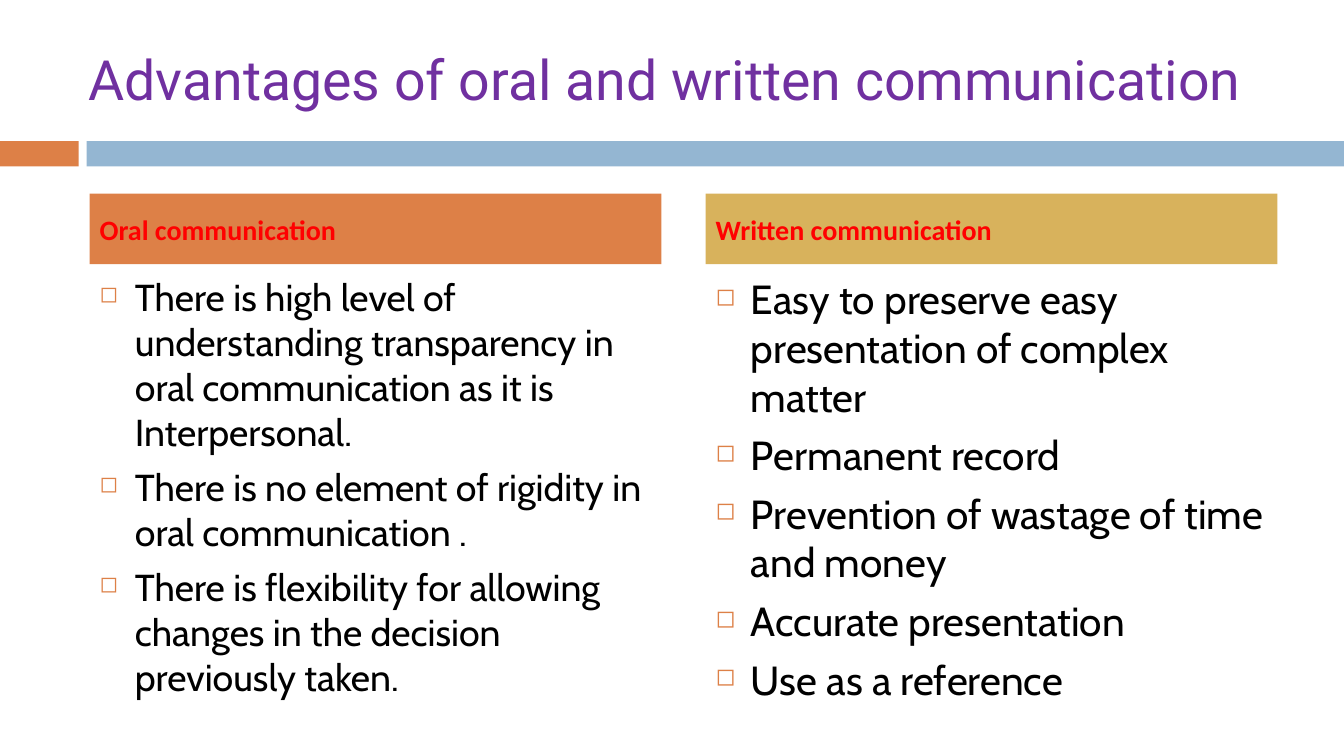
from lxml import etree
from pptx import Presentation
from pptx.dml.color import RGBColor
from pptx.enum import shapes, text
from pptx.oxml import ns
from pptx.util import Inches, Pt

COLORS = {
    "orange": "DD8047", "blue": "94B6D2", "gold": "D8B25C",
    "purple": "7030A0", "red": "FF0000", "black": "000000",
}
COLUMN_WIDTH = 5.67
COLUMNS = [
    (0.89, "Oral communication", "orange", 26.8, [
        "There is high level of understanding transparency in oral "
        "communication as it is Interpersonal.",
        "There is no element of rigidity in oral communication .",
        "There is flexibility for allowing changes in the decision previously taken.",
    ]),
    (7, "Written communication", "gold", 29, [
        "Easy to preserve easy presentation of complex matter",
        "Permanent record",
        "Prevention of wastage of time and money",
        "Accurate presentation",
        "Use as a reference",
    ]),
]


def rgb(name):
    return RGBColor.from_string(COLORS[name])


class SlideBuilder:
    FORMATS = {
        "title": {"name": "Roboto", "size": Pt(39.6), "bold": False},
        "heading": {"name": "Calibri", "size": Pt(20), "bold": True},
        "points": {"name": "Cabin", "bold": False},
    }
    TEXT_COLORS = {"title": "purple", "heading": "red", "points": "black"}

    def __init__(self, slide):
        self.slide = slide

    def bar(self, left, top, width, height, color):
        bar = self.slide.shapes.add_shape(
            shapes.MSO_SHAPE.RECTANGLE, *map(Inches, (left, top, width, height)))
        bar.shadow.inherit = False
        bar.fill.solid()
        bar.fill.fore_color.rgb = rgb(color)
        bar.line.fill.background()
        return bar

    def style(self, paragraph, role, **extra):
        for attribute, value in {**self.FORMATS[role], **extra}.items():
            setattr(paragraph.font, attribute, value)
        paragraph.font.color.rgb = rgb(self.TEXT_COLORS[role])
        paragraph.alignment = text.PP_ALIGN.LEFT

    def line(self, shape, wording, role):
        """Put one vertically centred line of text in a shape."""
        frame = shape.text_frame
        frame.word_wrap = True
        frame.vertical_anchor = text.MSO_ANCHOR.MIDDLE
        frame.text = wording
        self.style(frame.paragraphs[0], role)

    def title(self, left, top, width, height, wording):
        box = self.slide.shapes.add_textbox(*map(Inches, (left, top, width, height)))
        self.line(box, wording, "title")

    def heading(self, left, top, width, height, color, wording):
        self.line(self.bar(left, top, width, height, color), wording, "heading")

    def bullet(self, paragraph):
        properties = paragraph._p.get_or_add_pPr()
        properties.set("marL", str(Inches(0.35)))
        properties.set("indent", str(-Inches(0.35)))
        color = etree.SubElement(properties, ns.qn("a:buClr"))
        etree.SubElement(color, ns.qn("a:srgbClr"), val=COLORS["orange"])
        etree.SubElement(properties, ns.qn("a:buSzPct"), val="60000")
        etree.SubElement(properties, ns.qn("a:buChar"), char="◻")

    def points(self, left, top, width, height, size, wordings):
        box = self.slide.shapes.add_textbox(*map(Inches, (left, top, width, height)))
        frame = box.text_frame
        frame.word_wrap = True
        for index, wording in enumerate(wordings):
            point = frame.add_paragraph() if index else frame.paragraphs[0]
            point.text = wording
            self.bullet(point)
            point.space_before = Pt(7 if index else 0)
            self.style(point, "points", size=Pt(size))


def main():
    deck = Presentation()
    deck.slide_width, deck.slide_height = Inches(13.33), Inches(7.5)
    builder = SlideBuilder(deck.slides.add_slide(deck.slide_layouts[6]))
    builder.bar(0, 1.4, 0.78, 0.25, "orange")
    builder.bar(0.86, 1.4, 12.47, 0.25, "blue")
    builder.title(0.78, 0.3, 11.89, 0.95, "Advantages of oral and written communication")
    for left, heading, color, size, points in COLUMNS:
        builder.heading(left, 1.92, COLUMN_WIDTH, 0.7, color, heading)
        builder.points(left, 2.67, COLUMN_WIDTH, 3.92, size, points)
    deck.save("out.pptx")


if __name__ == "__main__":
    main()
